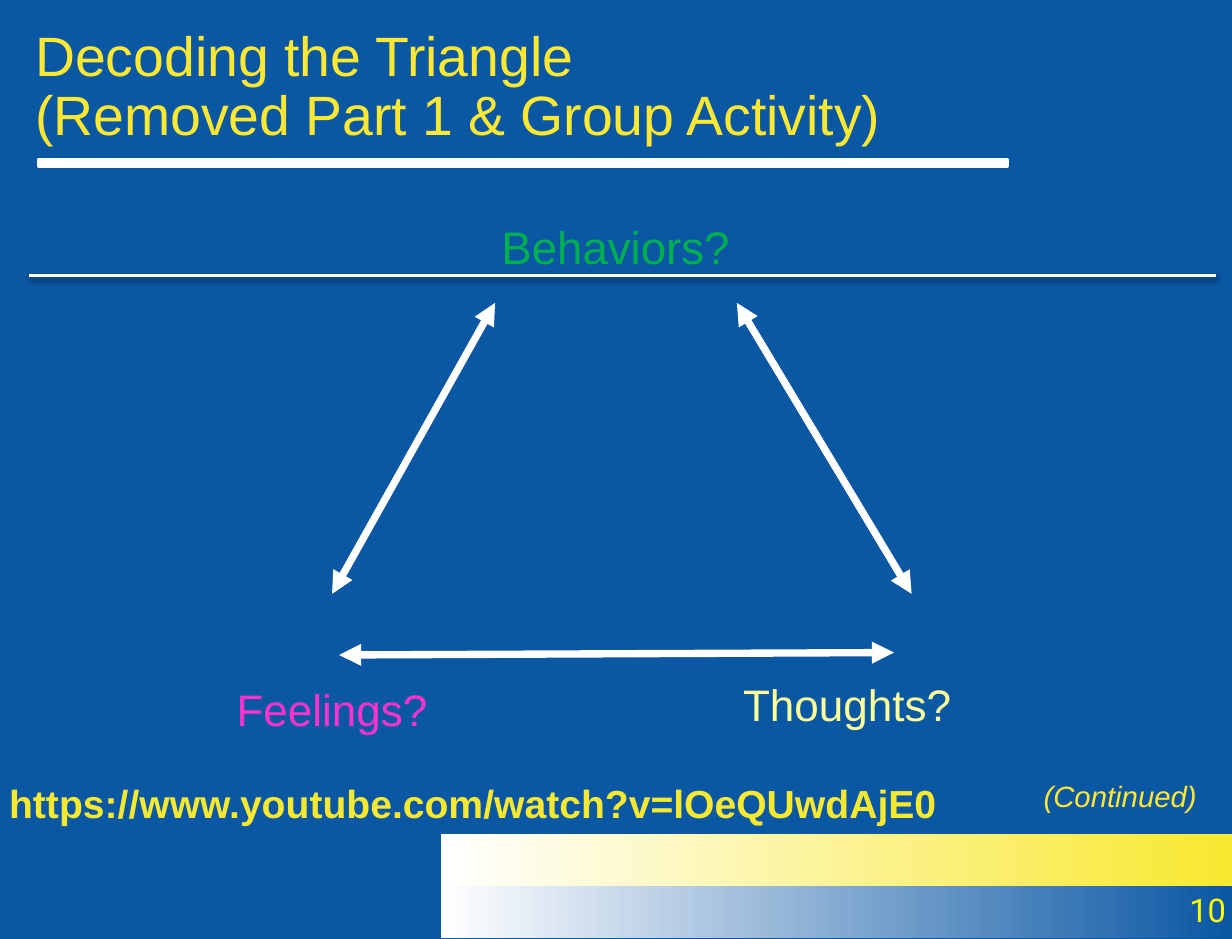
"""Build the Decoding the Triangle slide."""
from lxml import etree
from pptx import Presentation
from pptx import util as u
from pptx.dml.color import RGBColor
from pptx.enum import shapes, text
from pptx.oxml import ns

Pt = u.Pt
BLUE = RGBColor(0x0A, 0x57, 0xA4)
WHITE = RGBColor(0xFF, 0xFF, 0xFF)
GOLD = RGBColor(0xFF, 0xE8, 0x31)
YELLOW = RGBColor(0xF8, 0xE8, 0x2F)
BRIGHT_YELLOW = RGBColor(0xFF, 0xFF, 0x00)
PALE_YELLOW = RGBColor(0xFF, 0xFF, 0x99)
PINK = RGBColor(0xFF, 0x33, 0xCC)
GREEN = RGBColor(0x00, 0xB0, 0x50)
LEFT, CENTER, RIGHT = text.PP_ALIGN.LEFT, text.PP_ALIGN.CENTER, text.PP_ALIGN.RIGHT


def add_text(slide, words, box, color, size, align=LEFT, wrap=True, **extra):
    shape = slide.shapes.add_textbox(*map(Pt, box))
    frame = shape.text_frame
    frame.word_wrap = wrap
    for side in ("left", "top", "right", "bottom"):
        setattr(frame, f"margin_{side}", Pt(3.6))
    paragraph = frame.paragraphs[0]
    paragraph.text = words
    paragraph.alignment = align
    for run in paragraph.runs:
        run.font.color.rgb = color
        for name, value in {"name": "Arial", "size": Pt(size), **extra}.items():
            setattr(run.font, name, value)
    return shape


def add_line(slide, ends, width):
    connector = slide.shapes.add_connector(shapes.MSO_CONNECTOR.STRAIGHT, *map(Pt, ends))
    connector.line.color.rgb = WHITE
    connector.line.width = Pt(width)
    effects = etree.SubElement(connector._element.spPr, ns.qn("a:effectLst"))
    return connector, effects


presentation = Presentation()
presentation.slide_width, presentation.slide_height = Pt(756), Pt(576)
slide = presentation.slides.add_slide(presentation.slide_layouts[6])
slide.background.fill.solid()
slide.background.fill.fore_color.rgb = BLUE

rule = slide.shapes.add_shape(shapes.MSO_SHAPE.RECTANGLE, Pt(23.8), Pt(98.2), Pt(594.3), Pt(3.6))
rule.shadow.inherit = False
rule.fill.solid()
rule.fill.fore_color.rgb = WHITE
rule.line.color.rgb = WHITE
rule.line.width = Pt(2)

for row, color in enumerate((YELLOW, BLUE)):
    band = slide.shapes.add_shape(
        shapes.MSO_SHAPE.RECTANGLE, Pt(270.5), Pt(511.7 + 32 * row), Pt(485.5), Pt(32))
    band.shadow.inherit = False
    band.line.fill.background()
    band.fill.gradient()
    band.fill.gradient_angle = 180
    for stop, stop_color in zip(band.fill.gradient_stops, (color, WHITE)):
        stop.color.rgb = stop_color

add_text(slide, "10", (706, 542.2, 50, 31), BRIGHT_YELLOW, 20, RIGHT, name="Roboto")
add_text(slide, "Thoughts?", (451.8, 411.8, 136, 37.4), PALE_YELLOW, 27, CENTER, False)
add_text(slide, "Feelings?", (113, 415, 181.4, 37.4), PINK, 27, CENTER)
add_text(slide, "Behaviors?", (303.5, 130.6, 148.3, 38.2), GREEN, 28, CENTER, False)

for ends in ((208.1, 401.8, 548.6, 400.3),
             (559.4, 364.3, 452.2, 185.8),
             (203.8, 364.3, 303.8, 185.8)):
    arrow, effects = add_line(slide, ends, 4.5)
    for end in ("a:headEnd", "a:tailEnd"):
        etree.SubElement(arrow.line._get_or_add_ln(), ns.qn(end), type="triangle")

title = add_text(slide, "Decoding the Triangle\v(Removed Part 1 & Group Activity)",
                 (18, 13, 611.3, 82), GOLD, 34)
title.text_frame.vertical_anchor = text.MSO_ANCHOR.MIDDLE
title.text_frame.paragraphs[0].line_spacing = 0.9
add_text(slide, "(Continued)", (617.8, 473.8, 120.2, 27.4), GOLD, 18, RIGHT, italic=True)

divider, effects = add_line(slide, (18, 169.2, 745.9, 169.2), 2)
shadow = etree.SubElement(effects, ns.qn("a:outerShdw"), blurRad=str(Pt(3)),
                          dist=str(Pt(1.6)), dir="5400000", rotWithShape="0")
shade = etree.SubElement(shadow, ns.qn("a:srgbClr"), val="000000")
etree.SubElement(shade, ns.qn("a:alpha"), val="38000")

add_text(slide, "https://www.youtube.com/watch?v=lOeQUwdAjE0",
         (2, 474.5, 624.2, 36), YELLOW, 24, bold=True)

presentation.save("out.pptx")
